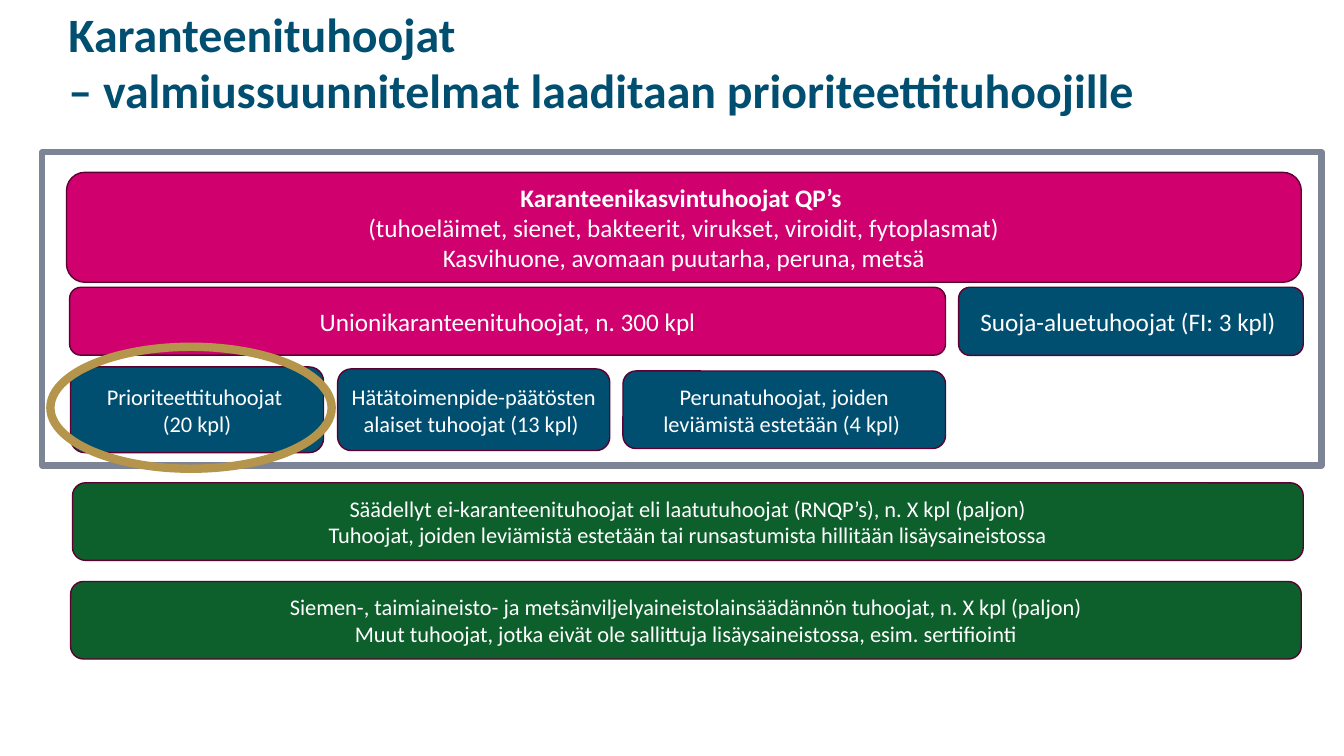
import pptx
import pptx.util
import pptx.dml.color
import pptx.enum.shapes
import pptx.enum.text

Pt = pptx.util.Pt
SHAPE = pptx.enum.shapes.MSO_SHAPE
ALIGN = pptx.enum.text.PP_ALIGN
ANCHOR = pptx.enum.text.MSO_ANCHOR

FONT = "Calibri"
BLUE, PINK, GREEN = "004F71", "D0006F", "0D5F2C"
EDGE, GREY, GOLD, WHITE = "5B0031", "7C8496", "B5944B", "FFFFFF"

TITLE = ["Karanteenituhoojat ", "– valmiussuunnitelmat laaditaan prioriteettituhoojille"]
TITLE_BOX = (41.8, 28.8, 790.6, 71.3)
FRAME = (30.2, 108.7, 913.7, 223.9)
HIGHLIGHT = (36, 247.7, 200.9, 87.1)

BOXES = [
    ((47.5, 123.1, 882, 78.5), PINK, 18, [
        ("Karanteenikasvintuhoojat QP’s ", True),
        ("(tuhoeläimet, sienet, bakteerit, virukset, viroidit, fytoplasmat)", False),
        ("Kasvihuone, avomaan puutarha, peruna, metsä", False)]),
    ((49.7, 205.2, 625.7, 48.5), PINK, 18, [
        ("Unionikaranteenituhoojat, n. 300 kpl", False)]),
    ((684.7, 205.2, 246.2, 48.7), BLUE, 18, [
        ("Suoja-aluetuhoojat (FI: 3 kpl) ", False)]),
    ((50.4, 262.1, 180.7, 61.2), BLUE, 16, [
        ("Prioriteettituhoojat ", False),
        ("(20 kpl)", False)]),
    ((241.2, 263.5, 194.4, 58.3), BLUE, 16, [
        ("Hätätoimenpide-päätösten alaiset tuhoojat (13 kpl) ", False)]),
    ((445, 265, 230.4, 55.4), BLUE, 16, [
        ("Perunatuhoojat, joiden leviämistä estetään (4 kpl) ", False)]),
    ((51.8, 344.9, 879.1, 55.4), GREEN, 16, [
        ("Säädellyt ei-karanteenituhoojat eli laatutuhoojat (RNQP’s), n. X kpl (paljon)", False),
        ("Tuhoojat, joiden leviämistä estetään tai runsastumista hillitään lisäysaineistossa", False)]),
    ((50.4, 415.4, 879.1, 55.4), GREEN, 16, [
        ("Siemen-, taimiaineisto- ja metsänviljelyaineistolainsäädännön tuhoojat, n. X kpl (paljon)", False),
        ("Muut tuhoojat, jotka eivät ole sallittuja lisäysaineistossa, esim. sertifiointi", False)]),
]


def rgb(value):
    return pptx.dml.color.RGBColor.from_string(value)


def add_run(p, text, size, color, bold):
    r = p.add_run()
    r.text = text
    r.font.name = FONT
    r.font.size = Pt(size)
    r.font.bold = bold
    r.font.color.rgb = rgb(color)


def add_outline(s, kind, box, line, width, fill=None):
    sp = s.shapes.add_shape(kind, *map(Pt, box))
    sp.shadow.inherit = False
    sp.line.color.rgb = rgb(line)
    sp.line.width = Pt(width)
    if fill:
        sp.fill.solid()
        sp.fill.fore_color.rgb = rgb(fill)
    else:
        sp.fill.background()
    return sp


def add_title(s):
    tf = s.shapes.add_textbox(*map(Pt, TITLE_BOX)).text_frame
    tf.word_wrap = True
    tf.vertical_anchor = ANCHOR.MIDDLE
    line_height = 40
    tf.margin_bottom = Pt(3.6 + line_height)
    p = tf.paragraphs[0]
    p.line_spacing = Pt(line_height)
    for i, text in enumerate(TITLE):
        if i:
            p.add_line_break()
        add_run(p, text, 34.2, BLUE, True)


def add_box(s, box, fill, size, lines):
    tf = add_outline(s, SHAPE.ROUNDED_RECTANGLE, box, EDGE, 1, fill).text_frame
    tf.word_wrap = True
    tf.vertical_anchor = ANCHOR.MIDDLE
    for i, (text, bold) in enumerate(lines):
        p = tf.add_paragraph() if i else tf.paragraphs[0]
        p.alignment = ALIGN.CENTER
        add_run(p, text, size, WHITE, bold)


def main():
    prs = pptx.Presentation()
    prs.slide_width, prs.slide_height = Pt(960), Pt(540)
    s = prs.slides.add_slide(prs.slide_layouts[6])
    add_outline(s, SHAPE.RECTANGLE, FRAME, GREY, 4.5)
    add_title(s)
    for box in BOXES:
        add_box(s, *box)
    add_outline(s, SHAPE.OVAL, HIGHLIGHT, GOLD, 6)
    prs.save("out.pptx")


if __name__ == "__main__":
    main()
